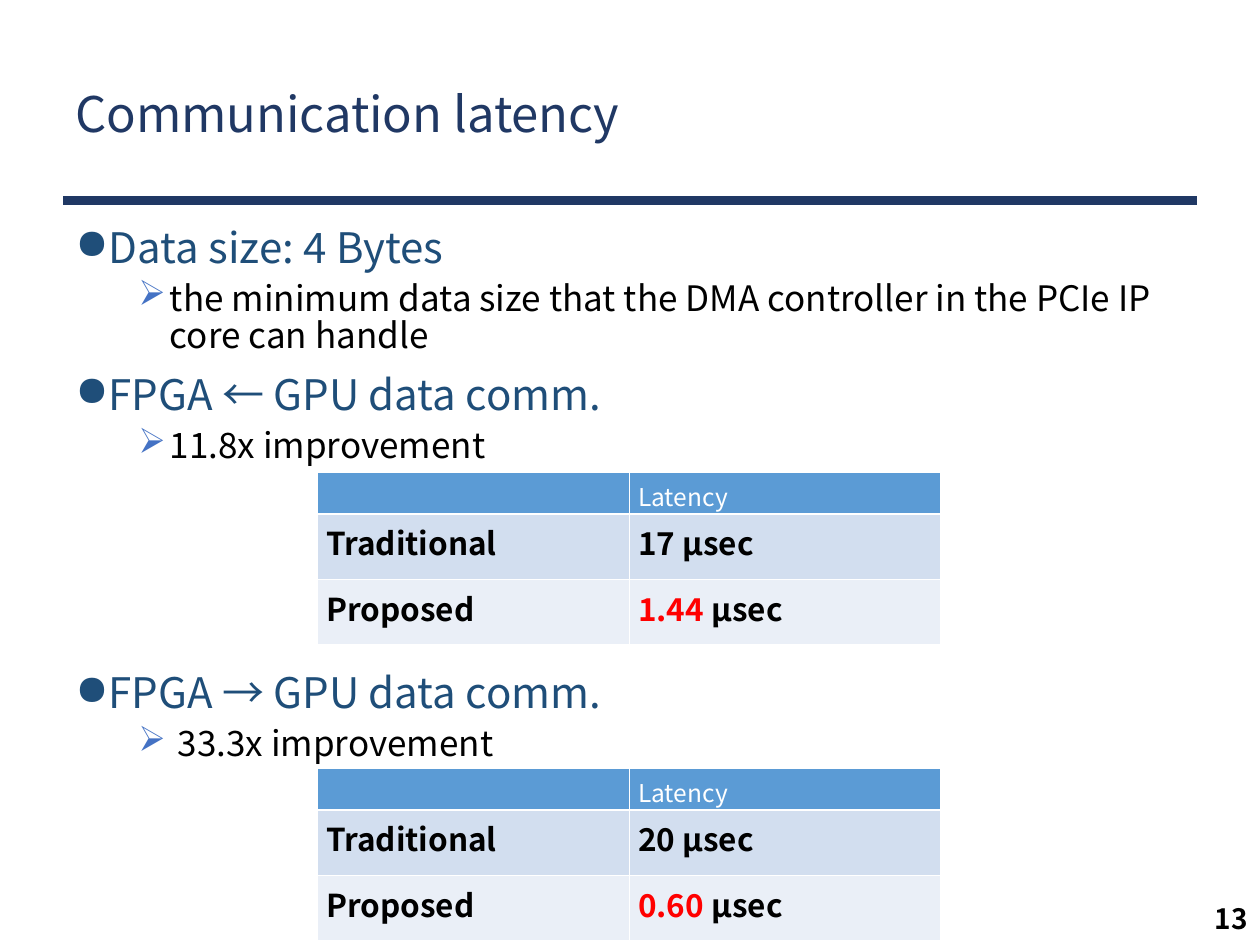
from lxml import etree
from pptx import Presentation
from pptx.dml.color import RGBColor
from pptx.enum import shapes, text
from pptx.oxml import ns
from pptx.util import Inches, Pt

FONT = "Noto Sans CJK JP"
COLORS = {
    "navy": "203864", "heading": "1F4E79", "arrow": "4472C4",
    "header": "5B9BD5", "band": "D2DEEF", "light": "EAEFF7",
    "white": "FFFFFF", "black": "000000", "red": "FF0000",
}
LEVELS = [
    {"indent": 0.25, "before": 10, "bullet": "●", "marker": "heading",
     "style": {"size": Pt(24)}, "color": "heading"},
    {"indent": 0.75, "before": 5, "bullet": "➢", "marker": "arrow",
     "style": {"size": Pt(20)}, "color": "black"},
]


def add_node(parent, tag, **attributes):
    return etree.SubElement(parent, ns.qn(tag), **attributes)


def add_color(parent, color):
    add_node(parent, "a:srgbClr", val=COLORS[color])


def apply(target, values):
    for name, value in values.items():
        setattr(target, name, value)


class SlideBuilder:
    def __init__(self, slide):
        self.slide = slide

    def run(self, paragraph, words, color, style):
        run = paragraph.add_run()
        run.text = words
        apply(run.font, {"name": FONT, **style})
        run.font.color.rgb = RGBColor.from_string(COLORS[color])
        add_node(run.font._element, "a:ea", typeface=FONT)

    def text_frame(self, box, anchor):
        frame = self.slide.shapes.add_textbox(*map(Inches, box)).text_frame
        apply(frame, {"word_wrap": True, "vertical_anchor": anchor})
        return frame

    def label(self, box, words, color, style, layout):
        paragraph = self.text_frame(box, text.MSO_ANCHOR.MIDDLE).paragraphs[0]
        apply(paragraph, layout)
        self.run(paragraph, words, color, style)

    def rule(self, left, right, top, color, width):
        rule = self.slide.shapes.add_connector(
            shapes.MSO_CONNECTOR.STRAIGHT,
            Inches(left), Inches(top), Inches(right), Inches(top))
        rule.line.color.rgb = RGBColor.from_string(COLORS[color])
        rule.line.width = Pt(width)
        add_node(rule._element.spPr, "a:effectLst")

    def bullets(self, box, items):
        frame = self.text_frame(box, text.MSO_ANCHOR.TOP)
        for index, (depth, words, extra_gap) in enumerate(items):
            level = LEVELS[depth]
            paragraph = frame.add_paragraph() if index else frame.paragraphs[0]
            apply(paragraph, {"level": depth, "line_spacing": 0.9,
                              "space_before": Pt(level["before"] + extra_gap)})
            properties = paragraph._p.get_or_add_pPr()
            properties.set("marL", str(Inches(level["indent"])))
            properties.set("indent", str(Inches(-0.25)))
            add_color(add_node(properties, "a:buClr"), level["marker"])
            add_node(properties, "a:buFont", typeface="OpenSymbol")
            add_node(properties, "a:buChar", char=level["bullet"])
            self.run(paragraph, words, level["color"], level["style"])

    def cell(self, cell, fill, pieces, style):
        apply(cell, {"margin_left": Inches(0.07), "margin_right": Inches(0.07),
                     "margin_top": Inches(0.04), "margin_bottom": Inches(0.04)})
        paragraph = cell.text_frame.paragraphs[0]
        for words, color in pieces:
            self.run(paragraph, words, color, style)
        if not pieces:
            add_node(paragraph._p, "a:endParaRPr", sz=str(int(style["size"].pt * 100)))
        properties = cell._tc.get_or_add_tcPr()
        for side in "LRTB":
            border = add_node(properties, f"a:ln{side}", w=str(Pt(1)))
            add_color(add_node(border, "a:solidFill"), "white")
        cell.fill.solid()
        cell.fill.fore_color.rgb = RGBColor.from_string(COLORS[fill])

    def latency_table(self, top, traditional, proposed):
        header = {"size": Pt(14), "bold": False}
        body = {"size": Pt(18), "bold": True}
        rows = [
            (0.33, "header", header, [[], [("Latency", "white")]]),
            (0.52, "band", body, [[("Traditional", "black")],
                                  [(f"{traditional} μsec", "black")]]),
            (0.52, "light", body, [[("Proposed", "black")],
                                   [(f"{proposed} ", "red"), ("μsec", "black")]]),
        ]
        table = self.slide.shapes.add_table(
            len(rows), 2, Inches(2.52), Inches(top), Inches(4.95), Inches(1.37)).table
        for column in table.columns:
            column.width = Inches(2.475)
        for r, (height, fill, style, cells) in enumerate(rows):
            table.rows[r].height = Inches(height)
            for c, pieces in enumerate(cells):
                self.cell(table.cell(r, c), fill, pieces, style)


def main():
    deck = Presentation()
    apply(deck, {"slide_width": Inches(10), "slide_height": Inches(7.5)})
    builder = SlideBuilder(deck.slides.add_slide(deck.slide_layouts[6]))
    builder.rule(0.5, 9.5, 1.59, "navy", 5)
    builder.label((0.5, 0.3, 8.26, 1.25), "Communication latency", "navy",
                  {"size": Pt(28)}, {"line_spacing": 0.9})
    builder.bullets((0.5, 1.75, 9, 4.95), [
        (0, "Data size: 4 Bytes", 0),
        (1, "the minimum data size that the DMA controller in the PCIe IP core can handle", 0),
        (0, "FPGA ← GPU data comm.", 0),
        (1, "11.8x improvement", 0),
        (0, "FPGA → GPU data comm.", 108),
        (1, " 33.3x improvement", 0),
    ])
    builder.label((7.75, 7.09, 2.25, 0.4), "13", "black",
                  {"size": Pt(16), "bold": True}, {"alignment": text.PP_ALIGN.RIGHT})
    builder.latency_table(3.75, "17", "1.44")
    builder.latency_table(6.1, "20", "0.60")
    deck.save("out.pptx")


if __name__ == "__main__":
    main()
